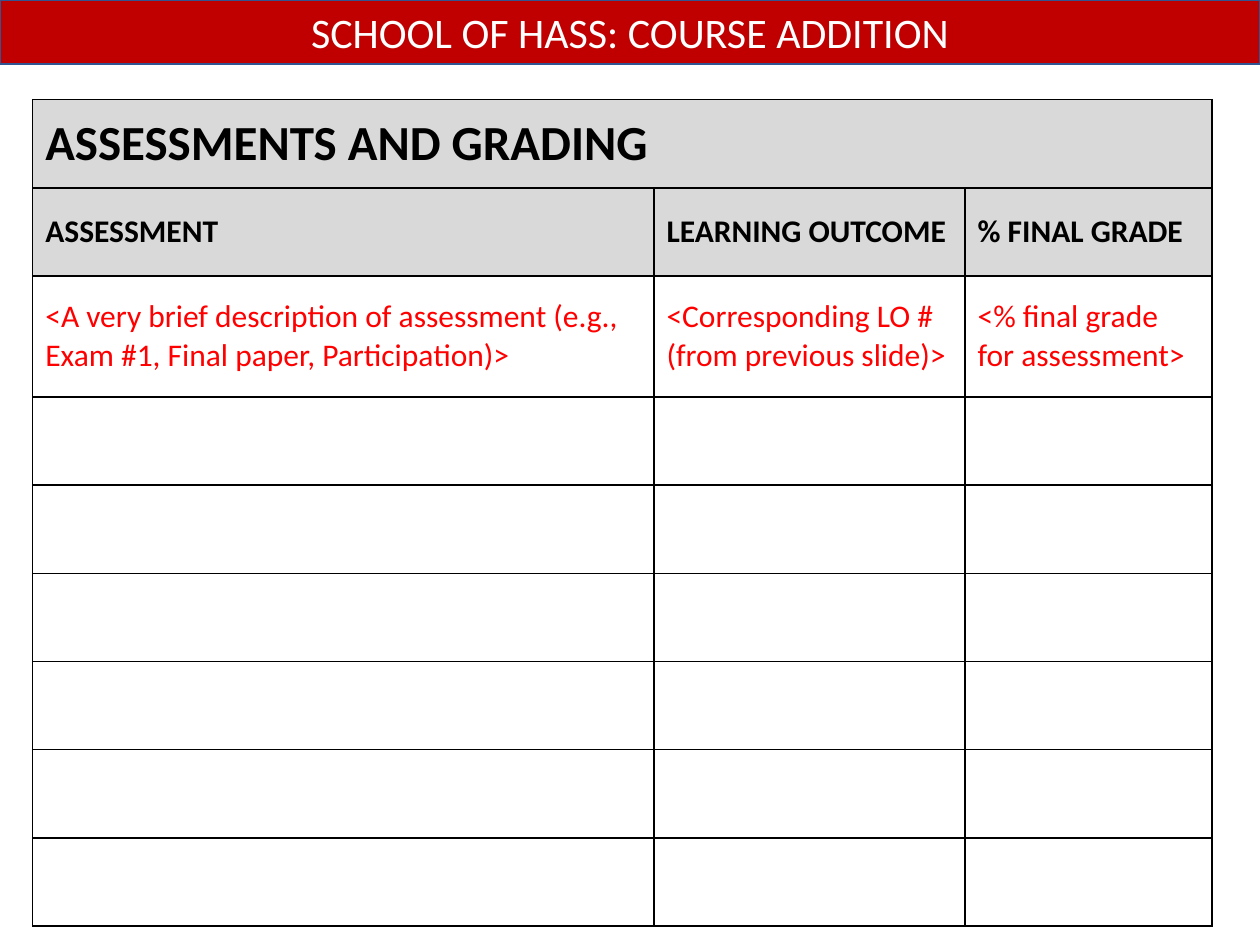
"""Build the course addition slide with its assessments and grading table."""
from lxml import etree
from pptx import Presentation
from pptx.dml.color import RGBColor
from pptx.enum import shapes, text
from pptx.oxml import ns
from pptx.util import Inches, Pt

BANNER = "SCHOOL OF HASS: COURSE ADDITION"
TITLE = "ASSESSMENTS AND GRADING"
HEADINGS = ["ASSESSMENT", "LEARNING OUTCOME", "% FINAL GRADE"]
PROMPTS = [
    "<A very brief description of assessment (e.g., Exam #1, Final paper, Participation)>",
    "<Corresponding LO # (from previous slide)>",
    "<% final grade for assessment>",
]
BLANK_ROWS = 6
ROWS = [[TITLE, "", ""], HEADINGS, PROMPTS] + [["", "", ""]] * BLANK_ROWS
FORMATS = [
    {"size": 28, "bold": True},
    {"size": 18, "bold": True},
    {"size": 18, "color": "FF0000"},
]
HEADER_ROWS = 2
COLUMN_WIDTHS = [4.93, 2.47, 1.96]
ROW_HEIGHTS = [0.7, 0.7, 0.96] + [0.7] * BLANK_ROWS


def rgb(color):
    return RGBColor.from_string(color)


def write(frame, content, size=18, color="000000", bold=False, align=text.PP_ALIGN.LEFT):
    frame.word_wrap = True
    paragraph = frame.paragraphs[0]
    paragraph.alignment = align
    run = paragraph.add_run()
    run.text = content
    run.font.name = "Calibri"
    run.font.size = Pt(size)
    run.font.bold = bold
    run.font.color.rgb = rgb(color)


def add_borders(cell, color="000000", width=1):
    properties = cell._tc.get_or_add_tcPr()
    for side in ("lnL", "lnR", "lnT", "lnB"):
        line = etree.SubElement(properties, ns.qn(f"a:{side}"), w=str(Pt(width)))
        fill = etree.SubElement(line, ns.qn("a:solidFill"))
        etree.SubElement(fill, ns.qn("a:srgbClr"), val=color)


def add_grading_table(slide):
    frame = slide.shapes.add_table(
        len(ROWS), len(COLUMN_WIDTHS), Inches(0.26), Inches(0.79),
        Inches(sum(COLUMN_WIDTHS)), Inches(sum(ROW_HEIGHTS)))
    table = frame.table
    table.first_row = table.horz_banding = False
    for column, width in zip(table.columns, COLUMN_WIDTHS):
        column.width = Inches(width)
    for index, (row, height) in enumerate(zip(table.rows, ROW_HEIGHTS)):
        row.height = Inches(height)
        for cell, content in zip(row.cells, ROWS[index]):
            cell.vertical_anchor = text.MSO_ANCHOR.MIDDLE
            add_borders(cell)
            if index < HEADER_ROWS:
                cell.fill.solid()
                cell.fill.fore_color.rgb = rgb("D9D9D9")
            else:
                cell.fill.background()
            if content:
                write(cell.text_frame, content, **FORMATS[index])
    table.cell(0, 0).merge(table.cell(0, len(COLUMN_WIDTHS) - 1))


def add_banner(slide, width):
    shape = slide.shapes.add_shape(
        shapes.MSO_SHAPE.RECTANGLE, 0, 0, width, Inches(0.51))
    shape.shadow.inherit = False
    shape.fill.solid()
    shape.fill.fore_color.rgb = rgb("C00000")
    shape.line.color.rgb = rgb("325491")
    shape.line.width = Pt(1)
    shape.text_frame.vertical_anchor = text.MSO_ANCHOR.MIDDLE
    write(shape.text_frame, BANNER, size=24, color="FFFFFF", align=text.PP_ALIGN.CENTER)


def main():
    presentation = Presentation()
    presentation.slide_width = Inches(10)
    presentation.slide_height = Inches(7.5)
    slide = presentation.slides.add_slide(presentation.slide_layouts[6])
    add_grading_table(slide)
    add_banner(slide, presentation.slide_width)
    presentation.save("out.pptx")


if __name__ == "__main__":
    main()
